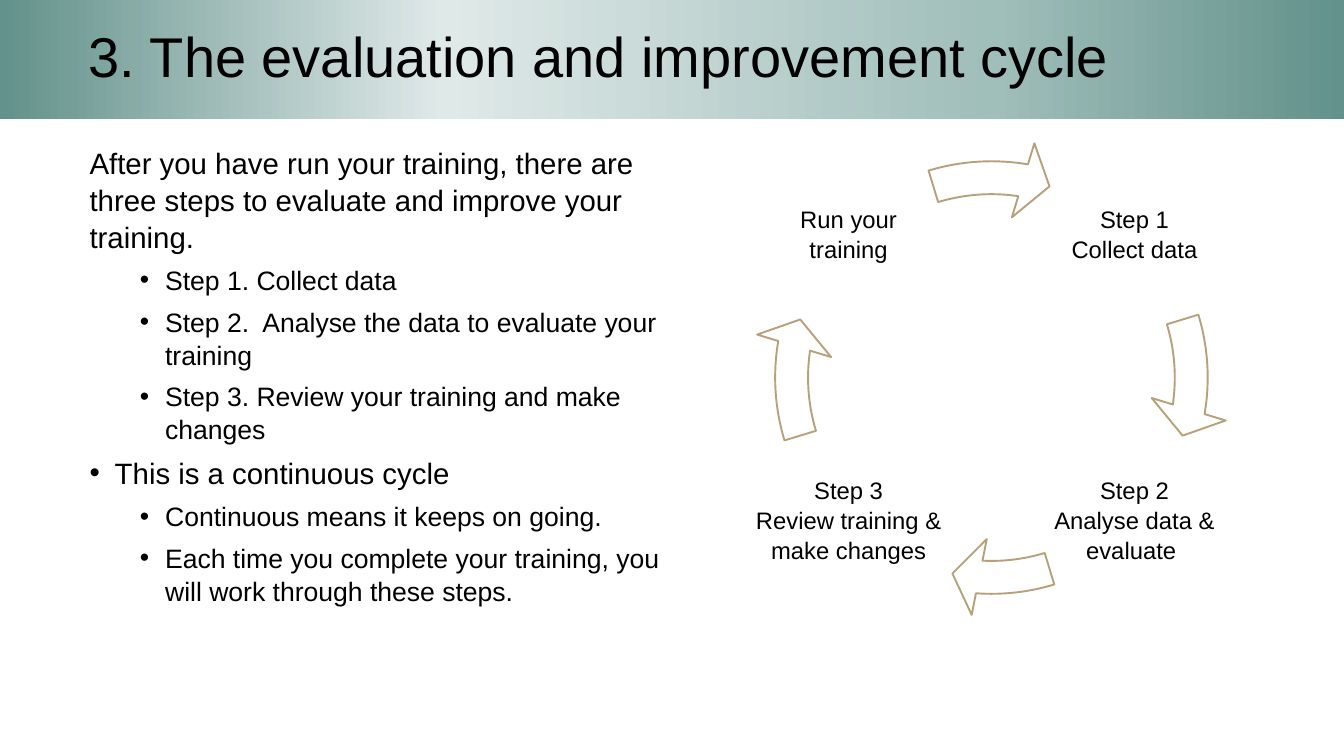
from dataclasses import dataclass

from lxml import etree
from pptx import Presentation
from pptx import util as u
from pptx.dml import color
from pptx.enum import shapes, text
from pptx.oxml import ns

FONT = "Arial"
BLACK = "000000"
WHITE = "FFFFFF"
TAN = "B6A17B"
BAND_STOPS = ((0, "63918B"), (33, "DFE9E8"), (74, "A0BEBA"), (100, "63918B"))
CYCLE_BOX = (537.9, 99.4, 340.6, 340.6)
LABEL_SIDE = 120.2
RING_WIDTH, HEAD_ANGLE, HEAD_WIDTH = 0.069, 4.657, 0.081


@dataclass(frozen=True)
class Point:
    words: str
    size: float
    left: float = 0
    hanging: float = 0
    level: int = 0


@dataclass(frozen=True)
class Stage:
    words: str
    center_x: float
    top: float
    end_angle: float
    start_angle: float
    width: float = LABEL_SIDE


def main_point(words: str) -> Point:
    return Point(words, 21, 18, 18)


def sub_point(words: str) -> Point:
    return Point(words, 19, 54, 18, 1)


POINTS = (
    Point("After you have run your training, there are three steps to evaluate and improve your training.", 21),
    sub_point("Step 1. Collect data"),
    sub_point("Step 2.  Analyse the data to evaluate your training"),
    sub_point("Step 3. Review your training and make changes"),
    main_point("This is a continuous cycle"),
    sub_point("Continuous means it keeps on going."),
    sub_point("Each time you complete your training, you will work through these steps."),
)

STAGES = (
    Stage("Step 1\vCollect data", 810.4, 106.6, 5.48, 205.863),
    Stage("Step 2\vAnalyse data & evaluate ", 810.4, 311, 56.1, 43.863),
    Stage("Step 3\vReview training & make changes", 606.2, 311, 113.48, 97.863, 148.3),
    Stage("Run your training", 606.2, 106.6, 167.48, 151.863),
)


def rgb(value: str) -> color.RGBColor:
    return color.RGBColor.from_string(value)


def apply(target, values: dict) -> None:
    for name, value in values.items():
        setattr(target, name, value)


def place(shape, left: float, top: float, width: float, height: float) -> None:
    apply(shape, {"left": u.Pt(left), "top": u.Pt(top), "width": u.Pt(width), "height": u.Pt(height)})


def format_font(font, size: float) -> None:
    apply(font, {"name": FONT, "size": u.Pt(size)})
    font.color.rgb = rgb(BLACK)


def set_indent(para, left: float, hanging: float) -> None:
    properties = para._p.get_or_add_pPr()
    properties.set("marL", str(int(u.Pt(left))))
    properties.set("indent", str(int(u.Pt(-hanging))))


def add_bullet(para) -> None:
    properties = para._p.get_or_add_pPr()
    etree.SubElement(properties, ns.qn("a:buFont"), typeface=FONT)
    etree.SubElement(properties, ns.qn("a:buChar"), char="•")


def fill_band(shape) -> None:
    shape.fill.gradient()
    shape.fill.gradient_angle = 0
    stop_list = shape._element.spPr.find(ns.qn("a:gradFill")).find(ns.qn("a:gsLst"))
    for stop in list(stop_list):
        stop_list.remove(stop)
    for percent, value in BAND_STOPS:
        stop = etree.SubElement(stop_list, ns.qn("a:gs"), pos=str(percent * 1000))
        etree.SubElement(stop, ns.qn("a:srgbClr"), val=value)


def draw_title(page, words: str) -> None:
    title = page.shapes.title
    place(title, 0, 0, 960, 85)
    fill_band(title)
    frame = title.text_frame
    frame.text = words
    apply(frame, {"word_wrap": True, "auto_size": text.MSO_AUTO_SIZE.NONE,
                  "vertical_anchor": text.MSO_ANCHOR.MIDDLE})
    para = frame.paragraphs[0]
    set_indent(para, 56.2, 0)
    apply(para, {"alignment": text.PP_ALIGN.LEFT, "line_spacing": 0.9})
    format_font(para.runs[0].font, 40)


def draw_points(page) -> None:
    box = page.shapes.add_textbox(u.Pt(56.9), u.Pt(99.4), u.Pt(434.9), u.Pt(339.8))
    frame = box.text_frame
    frame.word_wrap = True
    for index, point in enumerate(POINTS):
        para = frame.add_paragraph() if index else frame.paragraphs[0]
        set_indent(para, point.left, point.hanging)
        if point.hanging:
            add_bullet(para)
        apply(para, {"level": point.level, "space_after": u.Pt(6), "line_spacing": 1.04})
        span = para.add_run()
        span.text = point.words
        format_font(span.font, point.size)


def draw_label(page, stage: Stage) -> None:
    box = page.shapes.add_textbox(u.Pt(stage.center_x - stage.width / 2), u.Pt(stage.top),
                                  u.Pt(stage.width), u.Pt(LABEL_SIDE))
    frame = box.text_frame
    apply(frame, {"word_wrap": True, "vertical_anchor": text.MSO_ANCHOR.MIDDLE})
    apply(frame, {f"margin_{side}": u.Pt(1.5) for side in ("left", "top", "right", "bottom")})
    para = frame.paragraphs[0]
    para.text = stage.words
    apply(para, {"alignment": text.PP_ALIGN.CENTER, "space_after": u.Pt(6), "line_spacing": 1.04})
    for span in para.runs:
        format_font(span.font, 17)


def draw_arrow(page, stage: Stage) -> None:
    arrow = page.shapes.add_shape(shapes.MSO_SHAPE.CIRCULAR_ARROW, *map(u.Pt, CYCLE_BOX))
    arrow.shadow.inherit = False
    adjustments = (RING_WIDTH, HEAD_ANGLE, stage.end_angle, stage.start_angle, HEAD_WIDTH)
    for index, value in enumerate(adjustments):
        arrow.adjustments[index] = value
    arrow.fill.solid()
    arrow.fill.fore_color.rgb = rgb(WHITE)
    arrow.line.color.rgb = rgb(TAN)
    arrow.line.width = u.Pt(1.35)


def main() -> None:
    deck = Presentation()
    apply(deck, {"slide_width": u.Pt(960), "slide_height": u.Pt(540)})
    page = deck.slides.add_slide(deck.slide_layouts[5])
    draw_title(page, "3. The evaluation and improvement cycle")
    draw_points(page)
    for stage in STAGES:
        draw_label(page, stage)
        draw_arrow(page, stage)
    deck.save("out.pptx")


if __name__ == "__main__":
    main()
